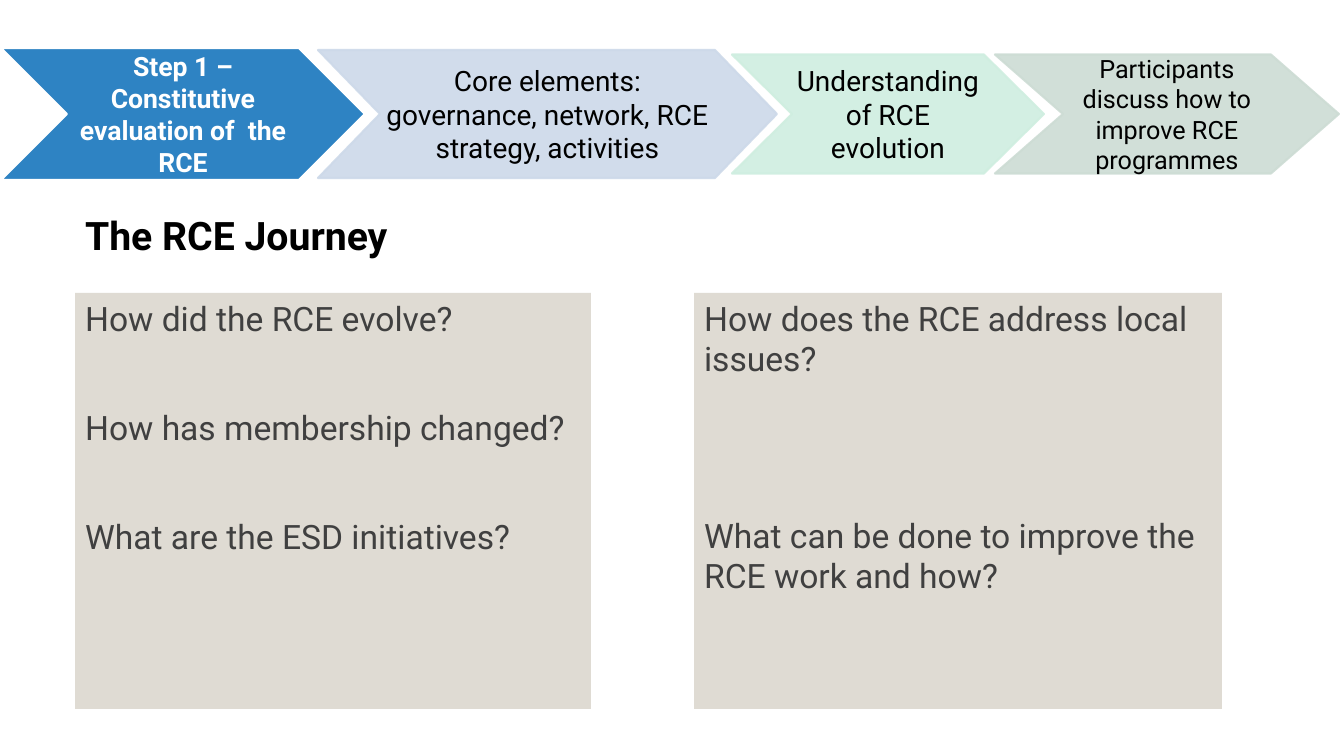
from pptx import Presentation
from pptx.dml.color import RGBColor
from pptx.enum.shapes import MSO_SHAPE
from pptx.enum.text import MSO_ANCHOR, MSO_AUTO_SIZE, PP_ALIGN
from pptx.oxml.ns import qn
from pptx.util import Emu, Pt
from lxml import etree

CHEVRON = MSO_SHAPE.CHEVRON
TOP, MIDDLE = MSO_ANCHOR.TOP, MSO_ANCHOR.MIDDLE
LEFT, CENTER = PP_ALIGN.LEFT, PP_ALIGN.CENTER
NO_AUTOFIT = MSO_AUTO_SIZE.NONE

WHITE = RGBColor(0xFF, 0xFF, 0xFF)
BLACK = RGBColor(0, 0, 0)
GREY = RGBColor(0x40, 0x40, 0x40)
SAND = RGBColor(0xDF, 0xDB, 0xD3)
BLUE = RGBColor(0x2E, 0x83, 0xC3)
PALE_BLUE = RGBColor(0xCD, 0xD9, 0xE9)
MINT = RGBColor(0xCF, 0xEE, 0xE0)
SAGE = RGBColor(0xCD, 0xDC, 0xD4)
FONT = "Roboto"

# Content; lengths in px
SLIDE_W, SLIDE_H = 1344, 756
HEADING = "The RCE Journey"
HEADING_BOX = (75, 206, 344, 56)

# text, left, width, height, point length, fill, line, opacity %, text colour, size, bold
STEPS = [
    ("Step 1 – Constitutive evaluation of  the RCE",
     1, 364, 132, 66, BLUE, WHITE, 100, WHITE, 19, True),
    ("Core elements: governance, network, RCE strategy, activities",
     318, 459, 128, 62, PALE_BLUE, PALE_BLUE, 90, BLACK, 20, False),
    ("Understanding of RCE evolution",
     732, 312, 119, 60, MINT, MINT, 90, BLACK, 20, False),
    ("Participants discuss how to improve RCE programmes",
     995, 344, 119, 68, SAGE, SAGE, 90, BLACK, 18, False),
]
STEPS_MIDDLE = 114

# box, points between questions, questions
QUESTION_PANELS = [
    ((75, 293, 516, 416), 49,
     ["How did the RCE evolve?", "How has membership changed?",
      "What are the ESD initiatives?"]),
    ((694, 293, 528, 416), 97,
     ["How does the RCE address local issues?",
      "What can be done to improve the RCE work and how?"]),
]

EMU_PER_PX = 914400 / 100.8


def px(length):
    return Emu(round(length * EMU_PER_PX))


def place(shape, box):
    shape.left, shape.top, shape.width, shape.height = map(px, box)


def style(paragraph, size, color, bold=False, align=LEFT):
    paragraph.alignment = align
    for run in paragraph.runs:
        font = run.font
        font.name, font.size, font.bold = FONT, Pt(size), bold
        font.color.rgb = color


def set_opacity(shape, percent):
    for color in shape._element.spPr.iter(qn("a:srgbClr")):
        etree.SubElement(color, qn("a:alpha")).set("val", str(percent * 1000))


def remove_bullet(paragraph):
    properties = paragraph._p.get_or_add_pPr()
    properties.set("marL", "0")
    properties.set("indent", "0")
    etree.SubElement(properties, qn("a:buNone"))


def fill_panel(panel, box, gap, questions):
    place(panel, box)
    panel.fill.solid()
    panel.fill.fore_color.rgb = SAND
    frame = panel.text_frame
    frame.text = "\n".join(questions)
    frame.auto_size = NO_AUTOFIT
    frame.vertical_anchor = TOP
    for number, question in enumerate(frame.paragraphs):
        style(question, 24, GREY)
        question.space_before = Pt(gap if number else 0)
        remove_bullet(question)


def add_step(slide, text, left, width, height, point, fill, line, opacity,
             color, size, bold):
    top = STEPS_MIDDLE - height / 2
    step = slide.shapes.add_shape(CHEVRON, *map(px, (left, top, width, height)))
    step.adjustments[0] = point / height
    step.shadow.inherit = False
    step.fill.solid()
    step.fill.fore_color.rgb = fill
    step.line.color.rgb = line
    step.line.width = Pt(1.5)
    if opacity < 100:
        set_opacity(step, opacity)
    frame = step.text_frame
    frame.text = text
    frame.word_wrap = True
    frame.vertical_anchor = MIDDLE
    frame.margin_left = frame.margin_right = px(1)
    frame.margin_top = frame.margin_bottom = px(1)
    style(frame.paragraphs[0], size, color, bold, CENTER)


prs = Presentation()
prs.slide_width, prs.slide_height = px(SLIDE_W), px(SLIDE_H)
slide = prs.slides.add_slide(prs.slide_layouts.get_by_name("Two Content"))
heading, *panels = slide.placeholders

# Question panels
for panel, content in zip(panels, QUESTION_PANELS):
    fill_panel(panel, *content)

# Chevron steps
for step in STEPS:
    add_step(slide, *step)

# Heading
place(heading, HEADING_BOX)
heading.text_frame.text = HEADING
heading.text_frame.auto_size = NO_AUTOFIT
heading.text_frame.vertical_anchor = TOP
style(heading.text_frame.paragraphs[0], 28, BLACK, bold=True)

# The layout's date, footer and number are not carried onto the slide
prs.save("out.pptx")
